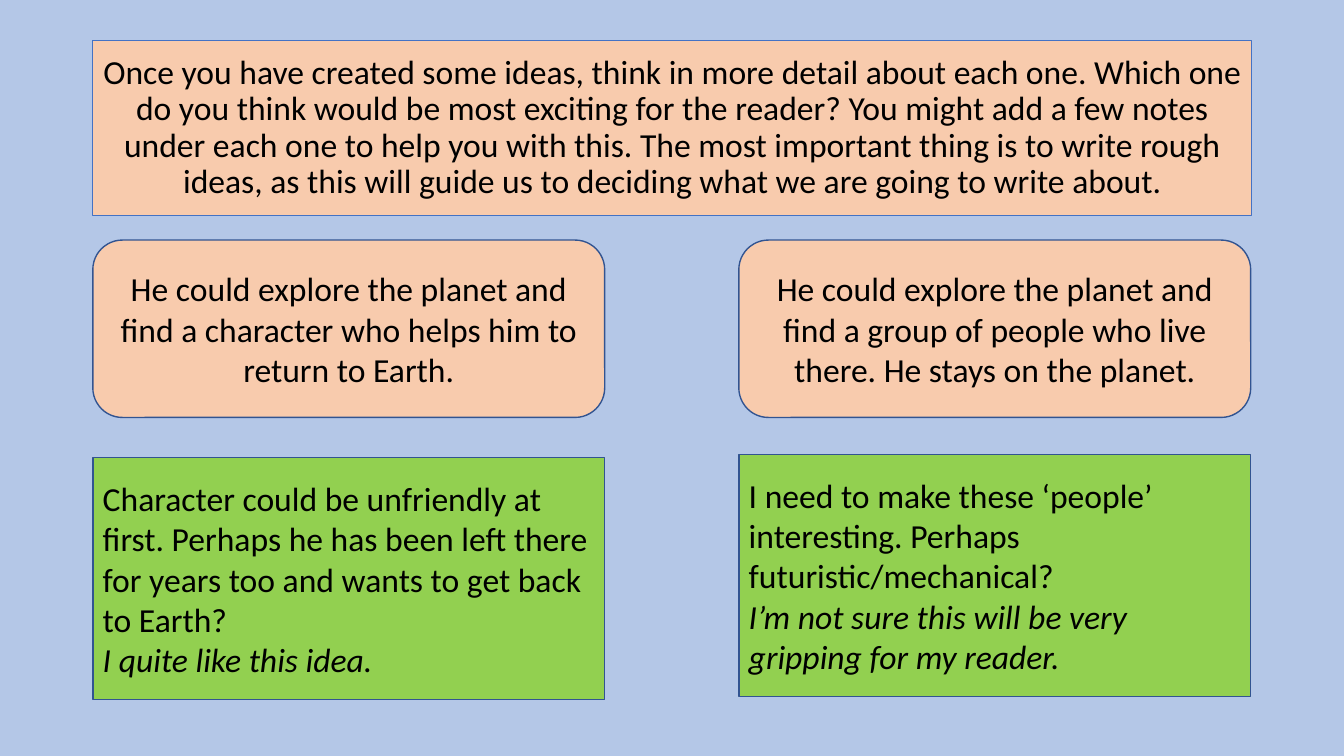
"""Build a slide that weighs up two story ideas."""
import pptx
import pptx.util
import pptx.dml.color
import pptx.enum.shapes
import pptx.enum.text

Cm = pptx.util.Cm
Pt = pptx.util.Pt
KIND = pptx.enum.shapes.MSO_SHAPE
ALIGN = pptx.enum.text.PP_ALIGN

PEACH, GREEN, NAVY = "F8CBAD", "92D050", "325491"
LEFT, RIGHT, WIDE = 2.34, 18.62, 12.9
INTRO = (
    "Once you have created some ideas, think in more detail about each one. "
    "Which one do you think would be most exciting for the reader? "
    "You might add a few notes under each one to help you with this. "
    "The most important thing is to write rough ideas, as this will guide us "
    "to deciding what we are going to write about."
)
IDEAS = [
    (
        LEFT,
        "He could explore the planet and find a character who helps him to "
        "return to Earth.",
        11.53,
        "Character could be unfriendly at first. Perhaps he has been left "
        "there for years too and wants to get back to Earth?",
        "I quite like this idea.",
    ),
    (
        RIGHT,
        "He could explore the planet and find a group of people who live "
        "there. He stays on the planet.",
        11.45,
        "I need to make these ‘people’ interesting. Perhaps "
        "futuristic/mechanical?",
        "I’m not sure this will be very gripping for my reader.",
    ),
]


def paint(fill, code):
    """Fill with one solid colour."""
    fill.solid()
    fill.fore_color.rgb = pptx.dml.color.RGBColor.from_string(code)


def style(item, form):
    """Set each attribute named in form."""
    for name, value in form.items():
        setattr(item, name, value)


def write(para, text, form, slant=False):
    """Put one run of text in a paragraph."""
    style(para, form)
    run = para.add_run()
    run.text = text
    style(run.font, {"name": "Calibri", "size": Pt(24), "italic": slant})
    paint(run.font.fill, "000000")


def panel(slide, kind, place, fill, edge, width):
    """Add a filled, outlined shape and return its text frame."""
    shape = slide.shapes.add_shape(kind, *map(Cm, place))
    shape.shadow.inherit = False
    paint(shape.fill, fill)
    paint(shape.line.fill, edge)
    shape.line.width = Pt(width)
    frame = shape.text_frame
    anchor = pptx.enum.text.MSO_ANCHOR.MIDDLE
    style(frame, {"word_wrap": True, "vertical_anchor": anchor})
    return frame


def intro(slide):
    """Add the opening advice."""
    place = (LEFT, 1.02, 29.21, 4.42)
    frame = panel(slide, KIND.RECTANGLE, place, PEACH, "4472C4", 0.75)
    form = {"alignment": ALIGN.CENTER, "line_spacing": 0.9}
    write(frame.paragraphs[0], INTRO, form)


def idea(slide, left, text):
    """Add a rounded box with a story idea."""
    place = (left, 6.05, WIDE, 4.47)
    frame = panel(slide, KIND.ROUNDED_RECTANGLE, place, PEACH, NAVY, 1)
    write(frame.paragraphs[0], text, {"alignment": ALIGN.CENTER})


def note(slide, left, top, text, view):
    """Add a green box with a note and a verdict in italics."""
    place = (left, top, WIDE, 6.1)
    frame = panel(slide, KIND.RECTANGLE, place, GREEN, NAVY, 1)
    form = {"alignment": ALIGN.LEFT}
    write(frame.paragraphs[0], text, form)
    write(frame.add_paragraph(), view, form, True)


def main():
    """Build and save the slide."""
    deck = pptx.Presentation()
    style(deck, {"slide_width": Cm(33.87), "slide_height": Cm(19.05)})
    slide = deck.slides.add_slide(deck.slide_layouts[6])
    paint(slide.background.fill, "B4C7E7")
    intro(slide)
    for left, plot, top, text, view in IDEAS:
        idea(slide, left, plot)
        note(slide, left, top, text, view)
    deck.save("out.pptx")


if __name__ == "__main__":
    main()
